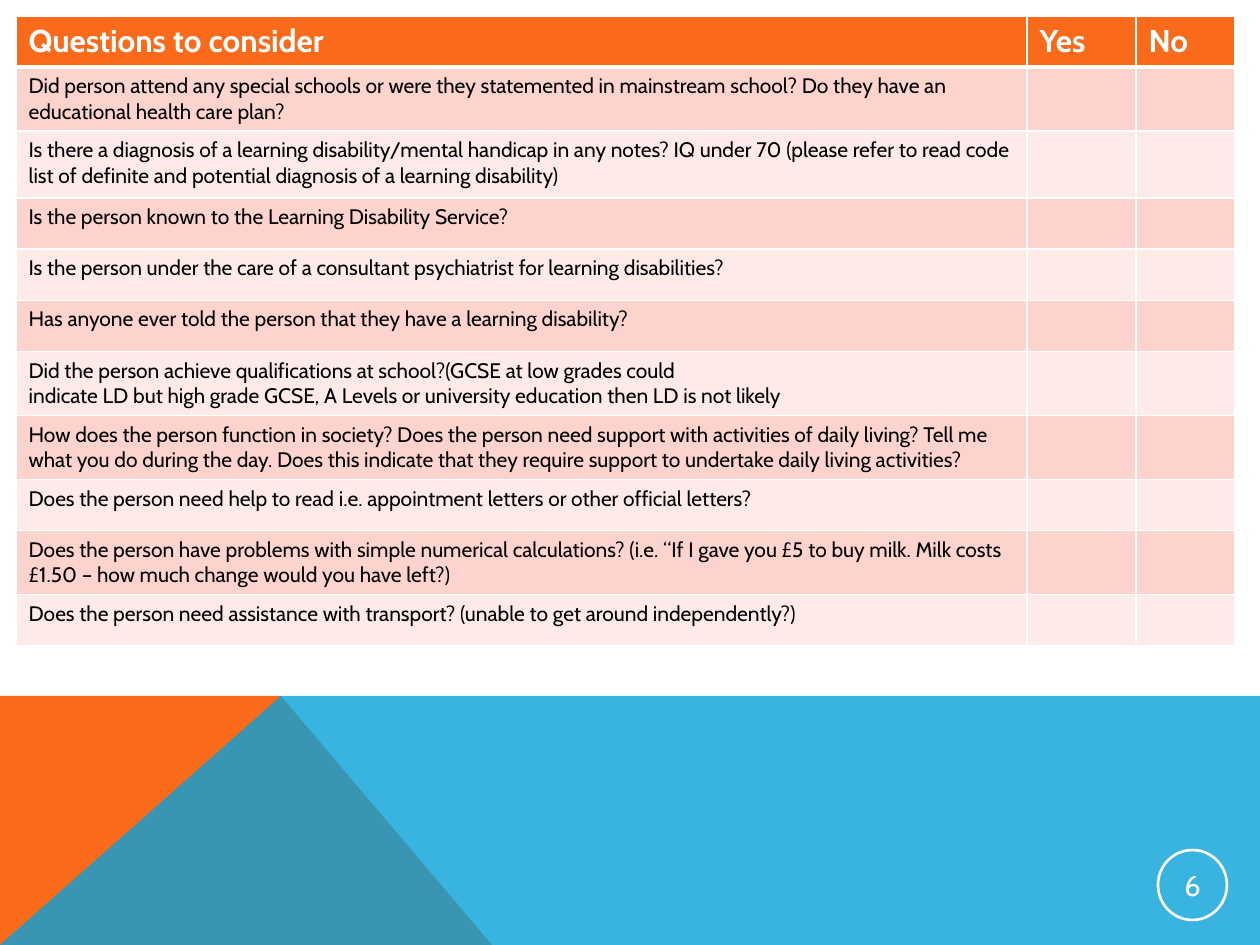
from lxml.etree import SubElement
from pptx import Presentation
from pptx.dml.color import RGBColor
from pptx.enum.shapes import MSO_SHAPE
from pptx.enum.text import MSO_ANCHOR, PP_ALIGN
from pptx.oxml.ns import qn
from pptx.util import Pt

PX = 914400 // 126
WHITE, ORANGE, BLUE = "FFFFFF", "F96A1B", "08A1D9"
BANDS = ["FEEBE8", "FDD4CD"]


def color(value):
    return RGBColor.from_string(value)


def write(paragraph, text, size, value, bold=False):
    run = paragraph.add_run()
    run.text = text
    run.font.color.rgb = color(value)
    for name, setting in {"name": "Cabin", "size": Pt(size), "bold": bold}.items():
        setattr(run.font, name, setting)


presentation = Presentation()
presentation.slide_width = 1260 * PX
presentation.slide_height = 945 * PX
slide = presentation.slides.add_slide(presentation.slide_layouts[6])

panels = [
    (ORANGE, None, [(0, 945), (0, 696), (281, 696), (492, 945)]),
    (BLUE, 80000, [(0, 945), (281, 696), (1260, 696), (1260, 945)]),
]
for fill, alpha, points in panels:
    builder = slide.shapes.build_freeform(*points[0], scale=PX)
    builder.add_line_segments(points[1:], close=True)
    panel = builder.convert_to_shape()
    panel.shadow.inherit = False
    panel.line.fill.background()
    panel.fill.solid()
    panel.fill.fore_color.rgb = color(fill)
    if alpha:
        panel_color = panel.fill._xPr.find(".//" + qn("a:srgbClr"))
        SubElement(panel_color, qn("a:alpha"), val=str(alpha))

badge = slide.shapes.add_shape(MSO_SHAPE.OVAL, 1158 * PX, 850 * PX, 69 * PX, 70 * PX)
badge.shadow.inherit = False
badge.fill.background()
badge.line.color.rgb = color(WHITE)
badge.line.width = Pt(1.5)
badge_format = {"vertical_anchor": MSO_ANCHOR.MIDDLE, "margin_left": PX, "margin_right": PX,
                "margin_top": PX, "margin_bottom": PX}
for name, setting in badge_format.items():
    setattr(badge.text_frame, name, setting)
badge_paragraph = badge.text_frame.paragraphs[0]
badge_paragraph.alignment = PP_ALIGN.CENTER
write(badge_paragraph, "6", 16.5, WHITE)

rows = [
    (51, ["Questions to consider", "Yes", "No"]),
    (64, ["Did person attend any special schools or were they statemented in mainstream school? "
          "Do they have an educational health care plan?"]),
    (67, ["Is there a diagnosis of a learning disability/mental handicap in any notes? IQ under 70 "
          "(please refer to read code list of definite and potential diagnosis of a learning disability)"]),
    (51, ["Is the person known to the Learning Disability Service?"]),
    (51, ["Is the person under the care of a consultant psychiatrist for learning disabilities?"]),
    (51, ["Has anyone ever told the person that they have a learning disability?"]),
    (64, ["Did the person achieve qualifications at school?(GCSE at low grades could\n"
          "indicate LD but high grade GCSE, A Levels or university education then LD is not likely"]),
    (64, ["How does the person function in society? Does the person need support with activities of "
          "daily living? Tell me what you do during the day. Does this indicate that they require "
          "support to undertake daily living activities?"]),
    (51, ["Does the person need help to read i.e. appointment letters or other official letters?"]),
    (64, ["Does the person have problems with simple numerical calculations? (i.e. “If I gave you £5 "
          "to buy milk. Milk costs £1.50 – how much change would you have left?)"]),
    (51, ["Does the person need assistance with transport? (unable to get around independently?)"]),
]
widths = [1011, 109, 99]
table = slide.shapes.add_table(
    len(rows), len(widths), 16 * PX, 16 * PX,
    sum(widths) * PX, sum(height for height, _ in rows) * PX).table
for column, width in zip(table.columns, widths):
    column.width = width * PX

for row_index, (height, texts) in enumerate(rows):
    table.rows[row_index].height = height * PX
    header = row_index == 0
    size, text_color = (18, WHITE) if header else (12, "000000")
    borders = {"a:lnL": 1, "a:lnR": 1, "a:lnT": 3 if row_index == 1 else 1, "a:lnB": 3 if header else 1}
    for column_index in range(len(widths)):
        cell = table.cell(row_index, column_index)
        properties = cell._tc.get_or_add_tcPr()
        for tag, width in borders.items():
            border = SubElement(properties, qn(tag), w=str(Pt(width)))
            SubElement(SubElement(border, qn("a:solidFill")), qn("a:srgbClr"), val=WHITE)
        cell.fill.solid()
        cell.fill.fore_color.rgb = color(ORANGE if header else BANDS[row_index % 2])
        if column_index < len(texts):
            for line_index, line in enumerate(texts[column_index].split("\n")):
                frame = cell.text_frame
                paragraph = frame.add_paragraph() if line_index else frame.paragraphs[0]
                write(paragraph, line, size, text_color, header)

presentation.save("out.pptx")
